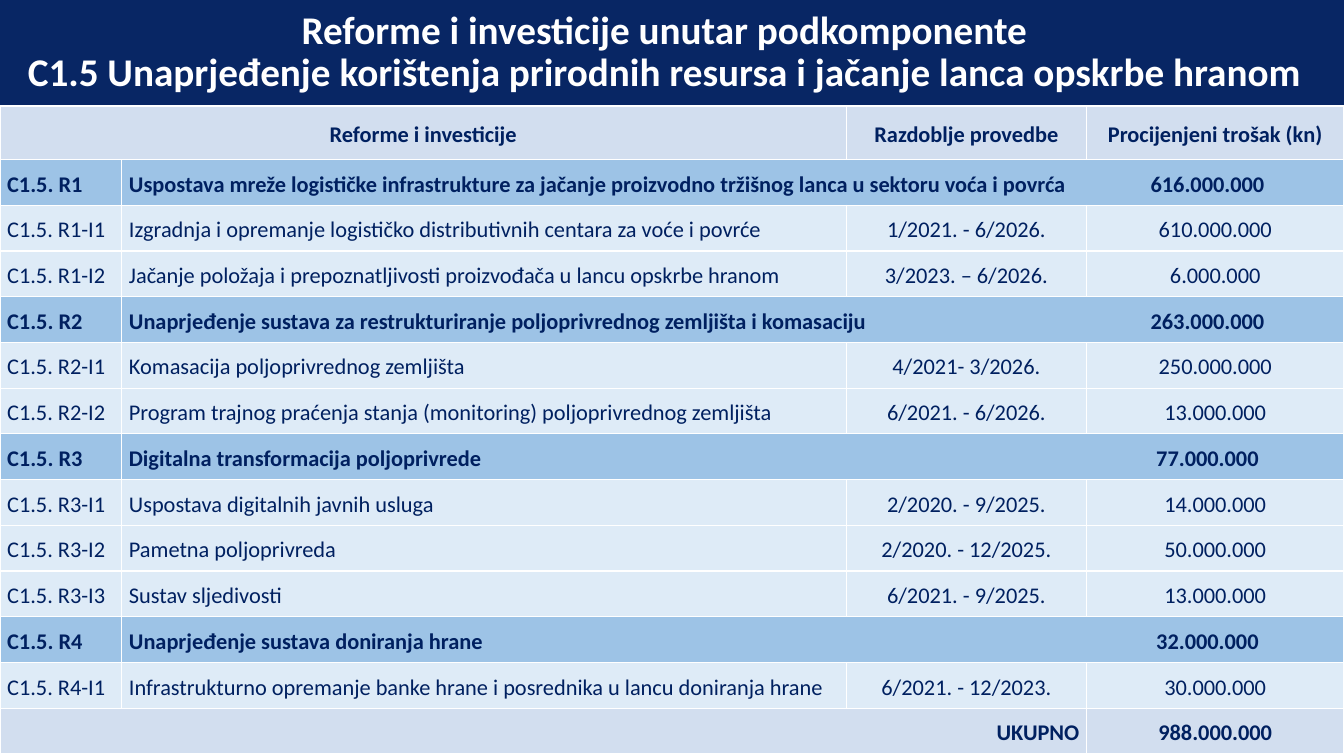
from lxml import etree
from pptx import Presentation
from pptx.dml.color import RGBColor
from pptx.enum.text import MSO_ANCHOR, MSO_AUTO_SIZE, PP_ALIGN as AL
from pptx.oxml.ns import qn
from pptx.util import Cm, Pt

# Content
TITLE = ("Reforme i investicije unutar podkomponente\v"
         "C1.5 Unaprjeđenje korištenja prirodnih resursa i jačanje lanca opskrbe hranom")
HEADER = ("Reforme i investicije", "Razdoblje provedbe", "Procijenjeni trošak (kn)")
REFORMS = [
    ("R1", "Uspostava mreže logističke infrastrukture za jačanje proizvodno tržišnog lanca "
           "u sektoru voća i povrća", "616.000.000", [
        ("Izgradnja i opremanje logističko distributivnih centara za voće i povrće",
         "1/2021. - 6/2026.", "610.000.000"),
        ("Jačanje položaja i prepoznatljivosti proizvođača u lancu opskrbe hranom",
         "3/2023. – 6/2026.", "6.000.000")]),
    ("R2", "Unaprjeđenje sustava za restrukturiranje poljoprivrednog zemljišta i komasaciju",
     "263.000.000", [
        ("Komasacija poljoprivrednog zemljišta", "4/2021- 3/2026.", "250.000.000"),
        ("Program trajnog praćenja stanja (monitoring) poljoprivrednog zemljišta",
         "6/2021. - 6/2026.", "13.000.000")]),
    ("R3", "Digitalna transformacija poljoprivrede", "77.000.000", [
        ("Uspostava digitalnih javnih usluga", "2/2020. - 9/2025.", "14.000.000"),
        ("Pametna poljoprivreda", "2/2020. - 12/2025.", "50.000.000"),
        ("Sustav sljedivosti", "6/2021. - 9/2025.", "13.000.000")]),
    ("R4", "Unaprjeđenje sustava doniranja hrane", "32.000.000", [
        ("Infrastrukturno opremanje banke hrane i posrednika u lancu doniranja hrane",
         "6/2021. - 12/2023.", "30.000.000")]),
]
TOTAL = ("UKUPNO", "988.000.000")

NAVY, WHITE = "002060", "FFFFFF"
HEAD_FILL, REFORM_FILL, ITEM_FILL = "D2DEEF", "9DC3E6", "DEEBF7"
FONT = "Calibri"

# Lengths in centimetres
WIDTH, HEIGHT = 33.87, 19.05
TITLE_H, TABLE_H, HEAD_H = 2.67, 16.33, 1.35
COLS = (3.07, 18.26, 6.05, 6.49)
AMOUNT_TAB = 27.18  # centre of the amount in a merged reform row


def rgb(code):
    return RGBColor.from_string(code)


def style(p, size, color, bold, align, spacing):
    p.font.name, p.font.size, p.font.bold = FONT, Pt(size), bold
    p.font.color.rgb = rgb(color)
    p.alignment, p.line_spacing = align, spacing


def add_borders(cell):
    tc_pr = cell._tc.get_or_add_tcPr()
    for i, side in enumerate(("lnL", "lnR", "lnT", "lnB")):
        ln = etree.Element(qn(f"a:{side}"), w=str(Pt(1)))
        fill = etree.SubElement(ln, qn("a:solidFill"))
        etree.SubElement(fill, qn("a:srgbClr"), val=WHITE)
        tc_pr.insert(i, ln)


def write(cell, text, bold=False, align=AL.LEFT):
    p = cell.text_frame.paragraphs[0]
    p.text = text
    style(p, 16, NAVY, bold, align, 1.15)
    return p


def add_center_tab(p, pos):
    tabs = etree.Element(qn("a:tabLst"))
    etree.SubElement(tabs, qn("a:tab"), pos=str(Cm(pos)), algn="ctr")
    p_pr = p._p.get_or_add_pPr()
    def_rpr = p_pr.find(qn("a:defRPr"))
    if def_rpr is None:
        p_pr.append(tabs)
    else:
        def_rpr.addprevious(tabs)


# Rows as (fill, bold, {column: (text, alignment)}, merged columns)
rows = [(HEAD_FILL, True, {c: (t, AL.CENTER) for c, t in zip((0, 2, 3), HEADER)}, (0, 1))]
for code, name, cost, items in REFORMS:
    rows.append((REFORM_FILL, True, {0: (f"C1.5. {code}", AL.LEFT),
                                     1: (f"{name}\t{cost}", AL.LEFT)}, (1, 3)))
    for n, (item, period, amount) in enumerate(items, 1):
        rows.append((ITEM_FILL, False, {0: (f"C1.5. {code}-I{n}", AL.LEFT), 1: (item, AL.LEFT),
                                        2: (period, AL.CENTER), 3: (amount, AL.CENTER)}, None))
rows.append((HEAD_FILL, True, {0: (TOTAL[0], AL.RIGHT), 3: (TOTAL[1], AL.CENTER)}, (0, 2)))

prs = Presentation()
prs.slide_width, prs.slide_height = Cm(WIDTH), Cm(HEIGHT)
s = prs.slides.add_slide(prs.slide_layouts[5])

# Title band
title = s.shapes.title
title.left, title.top, title.width, title.height = Cm(0), Cm(0), Cm(WIDTH), Cm(TITLE_H)
title.fill.solid()
title.fill.fore_color.rgb = rgb(NAVY)
band_color = title._element.spPr.find(".//" + qn("a:srgbClr"))
etree.SubElement(band_color, qn("a:alpha"), val="97000")
tf = title.text_frame
tf.auto_size, tf.word_wrap, tf.vertical_anchor = MSO_AUTO_SIZE.NONE, True, MSO_ANCHOR.MIDDLE
tf.margin_right = Cm(0.65)
tf.text = TITLE
style(tf.paragraphs[0], 28, WHITE, True, AL.CENTER, 0.9)

# Table of reforms and investments
table = s.shapes.add_table(len(rows), len(COLS), Cm(0), Cm(TITLE_H),
                           Cm(WIDTH), Cm(TABLE_H)).table
for col, width in zip(table.columns, COLS):
    col.width = Cm(width)
row_h = (TABLE_H - HEAD_H) / (len(rows) - 1)
for r, (fill, bold, texts, merged) in enumerate(rows):
    table.rows[r].height = Cm(row_h if r else HEAD_H)
    for c in range(len(COLS)):
        cell = table.cell(r, c)
        cell.fill.solid()
        cell.fill.fore_color.rgb = rgb(fill)
        cell.vertical_anchor = MSO_ANCHOR.MIDDLE
        cell.margin_left = cell.margin_right = Cm(0.18)
        cell.margin_top = cell.margin_bottom = 0
        add_borders(cell)
        if c in texts:
            text, align = texts[c]
            p = write(cell, text, bold, align)
            if "\t" in text:
                add_center_tab(p, AMOUNT_TAB)
            if r == 0:
                p.space_before = p.space_after = Pt(3)
    if merged:
        table.cell(r, merged[0]).merge(table.cell(r, merged[1]))

prs.save("out.pptx")
